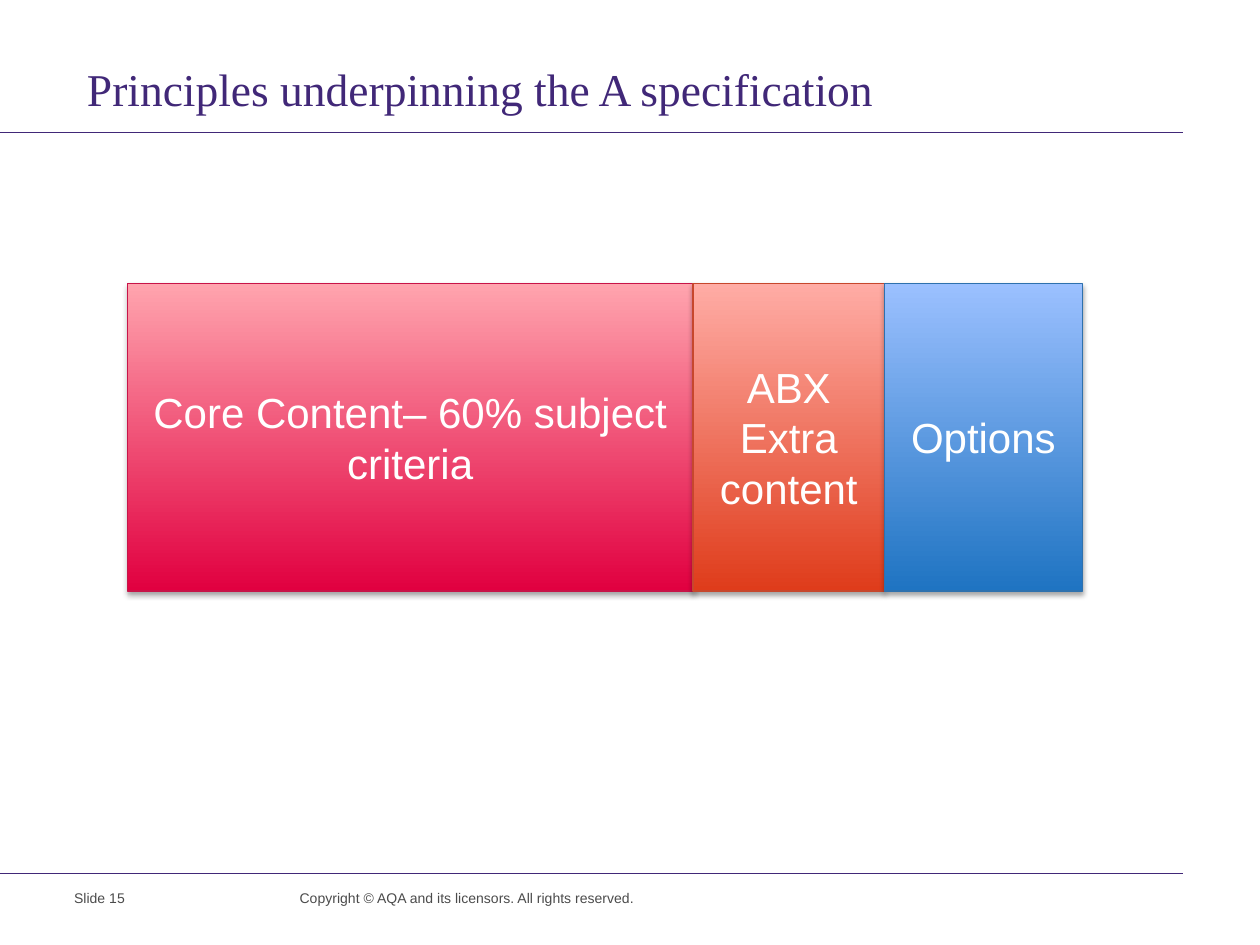
from lxml import etree
from pptx import Presentation
from pptx import util as u
from pptx.dml.color import RGBColor
from pptx.enum import shapes, text
from pptx.oxml.ns import qn

PURPLE = RGBColor(0x41, 0x28, 0x78)
GREY = RGBColor(0x4B, 0x4B, 0x4B)
WHITE = RGBColor(0xFF, 0xFF, 0xFF)
CRIMSON = RGBColor(0xE1, 0x00, 0x40)
PINK = RGBColor(0xFF, 0xA4, 0xAE)
CRIMSON_EDGE = RGBColor(0xC8, 0x14, 0x48)
ORANGE = RGBColor(0xDF, 0x3C, 0x1B)
SALMON = RGBColor(0xFF, 0xAC, 0xA5)
ORANGE_EDGE = RGBColor(0xC7, 0x47, 0x2D)
BLUE = RGBColor(0x1F, 0x74, 0xC2)
SKY = RGBColor(0x9B, 0xC0, 0xFF)
BLUE_EDGE = RGBColor(0x2E, 0x71, 0xAE)

# Content
TITLE = "Principles underpinning the A specification"
SECTIONS = [  # label, width, bottom colour, top colour, edge colour
    ("Core Content– 60% subject criteria", 4.49, CRIMSON, PINK, CRIMSON_EDGE),
    ("ABX Extra content", 1.52, ORANGE, SALMON, ORANGE_EDGE),
    ("Options", 1.57, BLUE, SKY, BLUE_EDGE),
]
FOOTERS = [  # text, left, width
    ("Slide 15", 0.49, 1.56),
    ("Copyright © AQA and its licensors. All rights reserved.", 2.28, 2.93),
]

# Layout, in inches
SLIDE_WIDTH, SLIDE_HEIGHT = 10, 7.5
RIGHT_EDGE = 9.39
RULES = (1.05, 6.93)
BAR_LEFT, BAR_TOP, BAR_HEIGHT = 1.01, 2.25, 2.44
TITLE_BOX = (0.59, 0.48, 8.8, 0.47)
FOOTER_TOP, FOOTER_HEIGHT = 7.01, 0.26


def inches(*lengths):
    return [u.Inches(length) for length in lengths]


def write(shape, words, font_name, size, color, alignment, anchor):
    frame = shape.text_frame
    frame.word_wrap = True
    frame.auto_size = text.MSO_AUTO_SIZE.NONE
    frame.vertical_anchor = anchor
    paragraph = frame.paragraphs[0]
    paragraph.alignment = alignment
    run = paragraph.add_run()
    run.text = words
    run.font.name = font_name
    run.font.size = u.Pt(size)
    run.font.color.rgb = color
    return paragraph


def add_soft_shadow(shape):
    shape.shadow.inherit = False
    effects = shape._element.spPr.find(qn("a:effectLst"))
    shadow = etree.SubElement(
        effects, qn("a:outerShdw"), blurRad=str(u.Pt(3.1)), dist=str(u.Pt(1.8)),
        dir=str(90 * 60000), rotWithShape="0")
    color = etree.SubElement(shadow, qn("a:srgbClr"), val="000000")
    etree.SubElement(color, qn("a:alpha"), val="35000")


def add_rule(slide, top):
    rule = slide.shapes.add_connector(
        shapes.MSO_CONNECTOR.STRAIGHT, *inches(0, top, RIGHT_EDGE, top))
    rule.line.color.rgb = PURPLE
    rule.line.width = u.Pt(0.6)
    etree.SubElement(rule._element.spPr, qn("a:effectLst"))


def add_section(slide, left, label, width, bottom, top, edge):
    shape = slide.shapes.add_shape(
        shapes.MSO_SHAPE.RECTANGLE, *inches(left, BAR_TOP, width, BAR_HEIGHT))
    shape.fill.gradient()
    shape.fill.gradient_angle = 90
    for stop, color in zip(shape.fill.gradient_stops, (bottom, top)):
        stop.color.rgb = color
    shape.line.color.rgb = edge
    shape.line.width = u.Pt(0.75)
    add_soft_shadow(shape)
    write(shape, label, "Arial", 24, WHITE,
          text.PP_ALIGN.CENTER, text.MSO_ANCHOR.MIDDLE)


def main():
    presentation = Presentation()
    presentation.slide_width, presentation.slide_height = inches(SLIDE_WIDTH, SLIDE_HEIGHT)
    slide = presentation.slides.add_slide(presentation.slide_layouts[5])

    # Rules under the title and above the footer
    for top in RULES:
        add_rule(slide, top)

    # Bar of adjoining sections
    left = BAR_LEFT
    for label, width, *colors in SECTIONS:
        add_section(slide, left, label, width, *colors)
        left += width

    # Title
    title = slide.shapes.title
    title.left, title.top, title.width, title.height = inches(*TITLE_BOX)
    paragraph = write(title, TITLE, "Times New Roman", 26, PURPLE,
                      text.PP_ALIGN.LEFT, text.MSO_ANCHOR.TOP)
    paragraph.line_spacing = u.Pt(28)

    # Footer
    for words, left, width in FOOTERS:
        box = slide.shapes.add_textbox(*inches(left, FOOTER_TOP, width, FOOTER_HEIGHT))
        write(box, words, "Arial", 8, GREY, text.PP_ALIGN.LEFT, text.MSO_ANCHOR.TOP)

    presentation.save("out.pptx")


if __name__ == "__main__":
    main()
